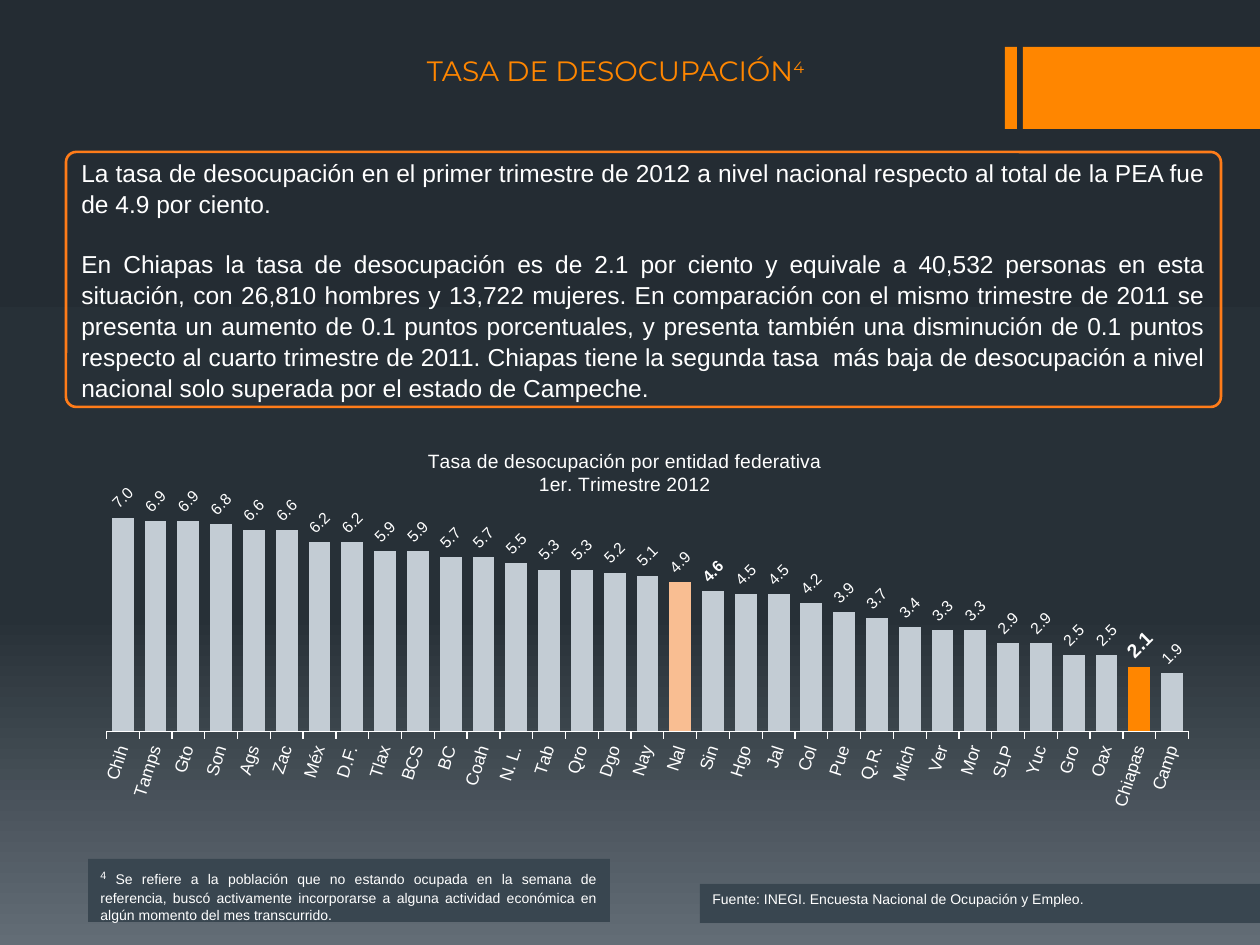
from lxml import etree
from pptx import Presentation, util as u
from pptx.chart.data import CategoryChartData
from pptx.dml.color import RGBColor
from pptx.enum import chart as charts, shapes, text
from pptx.oxml import parse_xml
from pptx.oxml.ns import nsdecls, qn

PIXELS_PER_INCH = 126
FONT = "Arial"
COLORS = {
    "white": "FFFFFF",
    "orange": "FF8600",
    "border": "FF7C19",
    "panel": "394650",
    "bar": "C3CCD4",
    "national": "F9BE92",
}
BACKGROUND_STOPS = [(0, "242C33"), (65, "273037"), (100, "636D76")]
SUMMARY = [
    "La tasa de desocupación en el primer trimestre de 2012 a nivel nacional respecto "
    "al total de la PEA fue de 4.9 por ciento.",
    "En Chiapas la tasa de desocupación es de 2.1 por ciento y equivale a 40,532 personas "
    "en esta situación, con 26,810 hombres y 13,722 mujeres. En comparación con el mismo "
    "trimestre de 2011 se presenta un aumento de 0.1 puntos porcentuales, y presenta también "
    "una disminución de 0.1 puntos respecto al cuarto trimestre de 2011. Chiapas tiene la "
    "segunda tasa  más baja de desocupación a nivel nacional solo superada por el estado de "
    "Campeche.",
]
FOOTNOTE = (
    " Se refiere a la población que no estando ocupada en la semana de referencia, buscó "
    "activamente incorporarse a alguna actividad económica en algún momento del mes transcurrido."
)
SOURCE = "Fuente: INEGI. Encuesta Nacional de Ocupación y Empleo."
CHART_TITLE = ["Tasa de desocupación por entidad federativa", "1er. Trimestre 2012"]
RATES = {
    "Chih": 7.0, "Tamps": 6.9, "Gto": 6.9, "Son": 6.8, "Ags": 6.6, "Zac": 6.6,
    "Méx": 6.2, "D.F.": 6.2, "Tlax": 5.9, "BCS": 5.9, "BC": 5.7, "Coah": 5.7,
    "N. L.": 5.5, "Tab": 5.3, "Qro": 5.3, "Dgo": 5.2, "Nay": 5.1, "Nal": 4.9,
    "Sin": 4.6, "Hgo": 4.5, "Jal": 4.5, "Col": 4.2, "Pue": 3.9, "Q.R.": 3.7,
    "Mich": 3.4, "Ver": 3.3, "Mor": 3.3, "SLP": 2.9, "Yuc": 2.9, "Gro": 2.5,
    "Oax": 2.5, "Chiapas": 2.1, "Camp": 1.9,
}
BAR_HIGHLIGHTS = {"Nal": "national", "Chiapas": "orange"}
BOLD_LABELS = {"Sin": 9, "Chiapas": 11}


def px(*lengths):
    return [round(length * u.Inches(1) / PIXELS_PER_INCH) for length in lengths]


def color(name):
    return RGBColor.from_string(COLORS[name])


def style_font(font, size, color_name="white", name=FONT, bold=False):
    font.size = u.Pt(size)
    font.name = name
    font.bold = bold
    font.color.rgb = color(color_name)


def add_run(paragraph, content, size, raised=False, **style):
    run = paragraph.add_run()
    run.text = content
    style_font(run.font, size, **style)
    if raised:
        run.font._element.set("baseline", "30000")


def set_background(slide):
    fill = slide.background.fill
    fill.gradient()
    fill.gradient_angle = 270
    stop_list = next(slide.background._cSld.iter(qn("a:gsLst")))
    for stop in list(stop_list):
        stop_list.remove(stop)
    for position, hex_color in BACKGROUND_STOPS:
        stop = etree.SubElement(stop_list, qn("a:gs"), pos=str(position * 1000))
        etree.SubElement(stop, qn("a:srgbClr"), val=hex_color)


def add_box(slide, box, fill=None, line=None, kind=shapes.MSO_SHAPE.RECTANGLE):
    shape = slide.shapes.add_shape(kind, *px(*box))
    shape.shadow.inherit = False
    if fill:
        shape.fill.solid()
        shape.fill.fore_color.rgb = color(fill)
    else:
        shape.fill.background()
    if line:
        shape.line.color.rgb = color(line)
        shape.line.width = u.Pt(1.5)
    else:
        shape.line.fill.background()
    shape.text_frame.word_wrap = True
    shape.text_frame.vertical_anchor = text.MSO_ANCHOR.TOP
    return shape


def add_body_paragraph(shape, first=True):
    frame = shape.text_frame
    paragraph = frame.paragraphs[0] if first else frame.add_paragraph()
    paragraph.alignment = text.PP_ALIGN.JUSTIFY
    paragraph.line_spacing = 1.05
    return paragraph


def set_title(slide):
    title = slide.shapes.title
    title.left, title.top, title.width, title.height = px(232, 47, 767, 47)
    frame = title.text_frame
    frame.auto_size = text.MSO_AUTO_SIZE.NONE
    frame.vertical_anchor = text.MSO_ANCHOR.MIDDLE
    paragraph = frame.paragraphs[0]
    paragraph.alignment = text.PP_ALIGN.CENTER
    style = {"size": 16, "color_name": "orange", "name": "Montserrat"}
    add_run(paragraph, "TASA DE DESOCUPACIÓN", **style)
    add_run(paragraph, "4", raised=True, **style)


def add_summary(slide):
    shape = add_box(slide, (66, 152, 1155, 255), line="border",
                    kind=shapes.MSO_SHAPE.ROUNDED_RECTANGLE)
    shape.adjustments[0] = 0.04
    shape.text_frame.vertical_anchor = text.MSO_ANCHOR.MIDDLE
    for index, content in enumerate(SUMMARY):
        paragraph = add_body_paragraph(shape, first=index == 0)
        if index:
            paragraph.space_before = u.Pt(17)
        add_run(paragraph, content, 14)


def add_notes_panels(slide):
    footnote = add_body_paragraph(add_box(slide, (88, 859, 522, 63), fill="panel"))
    add_run(footnote, "4", 10.5, raised=True)
    add_run(footnote, FOOTNOTE, 8)
    source = add_body_paragraph(add_box(slide, (700, 884, 560, 39), fill="panel"))
    add_run(source, SOURCE, 8)


def place(parent, index, target="", **lengths):
    for layout in parent.findall(qn("c:layout")):
        parent.remove(layout)
    parts = target + '<c:xMode val="edge"/><c:yMode val="edge"/>'
    parts += "".join(f'<c:{key} val="{value}"/>' for key, value in lengths.items())
    parent.insert(index, parse_xml(
        f"<c:layout {nsdecls('c')}><c:manualLayout>{parts}</c:manualLayout></c:layout>"))


def rotate_text(element, degrees):
    for body in element.iter(qn("a:bodyPr")):
        body.set("rot", str(degrees * 60000))
        body.set("vert", "horz")


def style_axes(chart):
    values = chart.value_axis
    values.minimum_scale, values.maximum_scale = 0, 8
    values.has_major_gridlines = False
    values.visible = False
    states = chart.category_axis
    states.has_major_gridlines = False
    states.major_tick_mark = charts.XL_TICK_MARK.OUTSIDE
    states.format.line.color.rgb = color("white")
    style_font(states.tick_labels.font, 10)
    rotate_text(states._element, -72)


def style_bars(chart):
    plot = chart.plots[0]
    plot.gap_width = 50
    plot.vary_by_categories = False
    series = plot.series[0]
    series.format.fill.solid()
    series.format.fill.fore_color.rgb = color("bar")
    labels = series.data_labels
    labels.show_value = True
    labels.number_format = "0.0"
    labels.number_format_is_linked = False
    labels.position = charts.XL_LABEL_POSITION.OUTSIDE_END
    style_font(labels.font, 9)
    states = list(RATES)
    for state, fill in BAR_HIGHLIGHTS.items():
        point_fill = series.points[states.index(state)].format.fill
        point_fill.solid()
        point_fill.fore_color.rgb = color(fill)
    for state, size in BOLD_LABELS.items():
        label = series.points[states.index(state)].data_label
        style_font(label.font, size, bold=True)
        label.position = charts.XL_LABEL_POSITION.OUTSIDE_END
    rotate_text(series._element, -45)


def add_rates_chart(slide):
    data = CategoryChartData(number_format="0.0")
    data.categories = list(RATES)
    data.add_series("Series 1", list(RATES.values()))
    chart = slide.shapes.add_chart(
        charts.XL_CHART_TYPE.COLUMN_CLUSTERED, *px(66, 402, 1155, 420), data).chart
    style_font(chart.font, 10)
    chart.has_legend = False
    chart.has_title = True
    frame = chart.chart_title.text_frame
    for index, content in enumerate(CHART_TITLE):
        paragraph = frame.add_paragraph() if index else frame.paragraphs[0]
        add_run(paragraph, content, 11)
    place(chart.chart_title._element, 1, x=0.31, y=0.1)
    plot_area = next(chart._chartSpace.iter(qn("c:plotArea")))
    place(plot_area, 0, '<c:layoutTarget val="inner"/>', x=0.035, y=0.203, w=0.937, h=0.581)
    style_axes(chart)
    style_bars(chart)


def main():
    presentation = Presentation()
    presentation.slide_width, presentation.slide_height = px(1260, 945)
    slide = presentation.slides.add_slide(presentation.slide_layouts[5])
    set_background(slide)
    for box in ((1005, 47, 12, 82), (1023, 47, 237, 82)):
        add_box(slide, box, fill="orange")
    add_summary(slide)
    add_notes_panels(slide)
    add_rates_chart(slide)
    set_title(slide)
    presentation.save("out.pptx")


if __name__ == "__main__":
    main()
